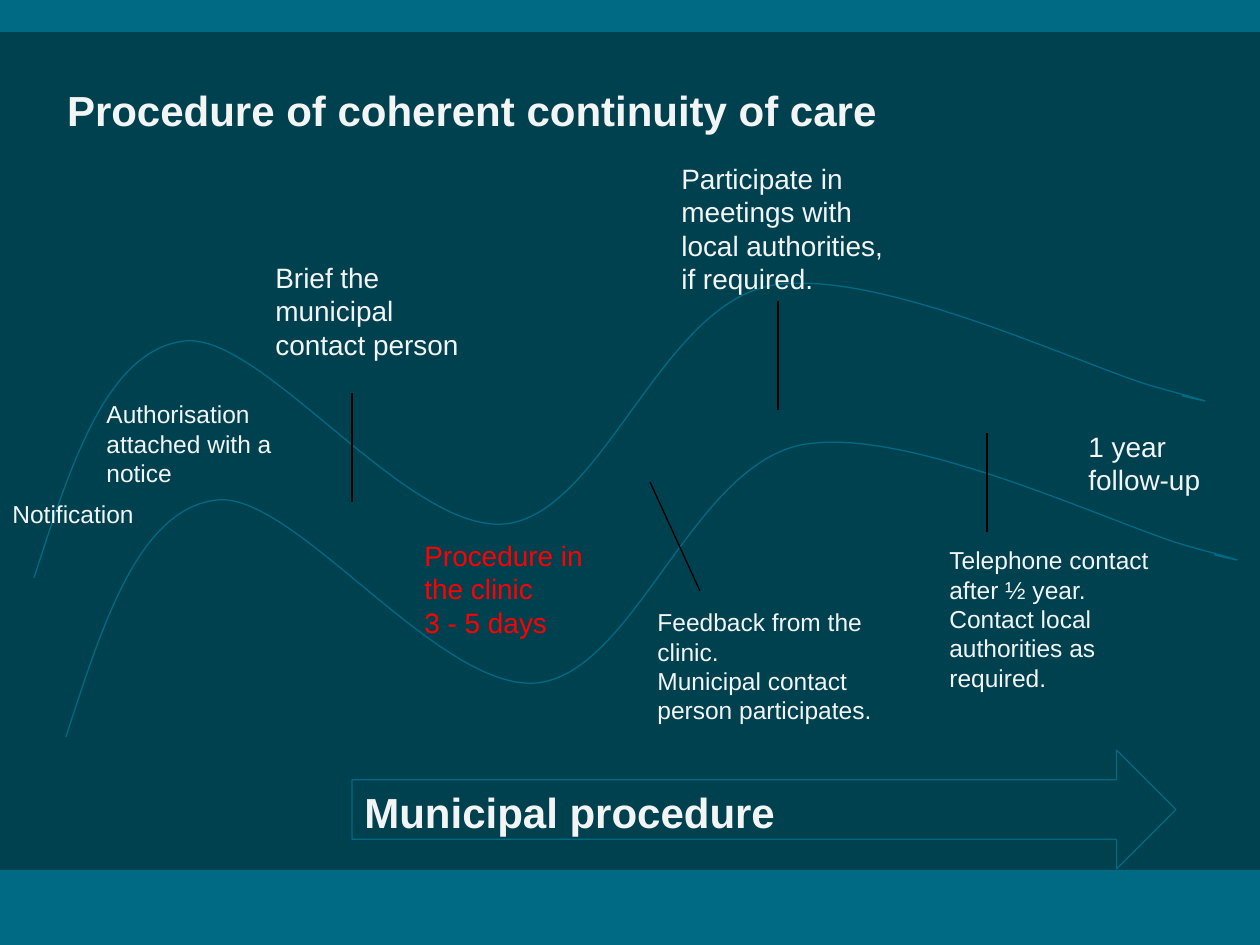
from lxml.etree import SubElement
from pptx import Presentation
from pptx.dml.color import RGBColor
from pptx.enum.shapes import MSO_CONNECTOR, MSO_SHAPE
from pptx.enum.text import MSO_ANCHOR
from pptx.oxml.ns import qn
from pptx.util import Pt

SCALE = 914400 / 126
BACK, TEAL, LIGHT, RED, BLACK = "004150", "006983", "F3F5F5", "FF0000", "000000"

WAVE = [
    (34, 578),
    (71, 464), (107, 350), (185, 341),
    (263, 333), (407, 533), (505, 524),
    (602, 514), (659, 309), (769, 286),
    (877, 265), (1090, 370), (1159, 388),
    (1228, 407), (1205, 401), (1182, 396),
]
WAVE_OFFSETS = [(32, 159), (0, 0)]

LABELS = [
    ((0, 493, 154, 43), "Notification", 14, LIGHT),
    ((94, 393, 208, 102), "Authorisation attached with a notice", 14, LIGHT),
    ((263, 254, 218, 115), "Brief the municipal contact person", 16, LIGHT),
    ((412, 532, 198, 115), "Procedure in the clinic\n3 - 5 days", 16, RED),
    ((669, 155, 238, 149), "Participate in meetings with local authorities, if required.", 16, LIGHT),
    ((937, 539, 238, 161), "Telephone contact after ½ year. Contact local authorities as required.", 14, LIGHT),
    ((1076, 423, 184, 81), "1 year follow-up", 16, LIGHT),
    ((645, 601, 258, 131), "Feedback from the clinic.\nMunicipal contact person participates.", 14, LIGHT),
]
MARKERS = [
    (352, 393, 352, 502),
    (987, 433, 987, 532),
    (650, 482, 700, 591),
    (778, 301, 778, 410),
]


def px(n):
    return round(n * SCALE)


def color(value):
    return RGBColor.from_string(value)


def write(tf, text, size=14, fill=LIGHT, bold=False):
    tf.word_wrap = True
    for i, line in enumerate(text.split("\n")):
        p = tf.paragraphs[0] if i == 0 else tf.add_paragraph()
        r = p.add_run()
        r.text = line
        r.font.name = "Arial"
        r.font.size = Pt(size)
        r.font.bold = bold
        r.font.color.rgb = color(fill)


class Builder:
    def __init__(self, s, font_color=LIGHT, line_width=0.75):
        self.s = s
        self.font_color = font_color
        self.line_width = line_width

    def style(self, sp, fill=None, line=None):
        sp.shadow.inherit = False
        if fill:
            sp.fill.solid()
            sp.fill.fore_color.rgb = color(fill)
        else:
            sp.fill.background()
        if line:
            sp.line.color.rgb = color(line)
            sp.line.width = Pt(self.line_width)
        else:
            sp.line.fill.background()
        for p in sp.text_frame.paragraphs:
            p.font.color.rgb = color(self.font_color)

    def shape(self, kind, box, fill=None, line=None):
        sp = self.s.shapes.add_shape(kind, *map(px, box))
        self.style(sp, fill, line)

    def curve(self, points, line):
        fb = self.s.shapes.build_freeform(*points[0], scale=SCALE)
        fb.add_line_segments(points[1:], close=False)
        sp = fb.convert_to_shape()
        path = next(sp._element.iter(qn("a:path")))
        segments = path.findall(qn("a:lnTo"))
        for i in range(0, len(segments), 3):
            bezier = SubElement(path, qn("a:cubicBezTo"))
            for segment in segments[i:i + 3]:
                bezier.append(segment[0])
                path.remove(segment)
        self.style(sp, line=line)

    def text(self, box, text, **fmt):
        sp = self.s.shapes.add_textbox(*map(px, box))
        write(sp.text_frame, text, **fmt)
        return sp.text_frame

    def title(self, box, text, **fmt):
        tf = self.text(box, text, **fmt)
        tf.vertical_anchor = MSO_ANCHOR.BOTTOM
        tf.margin_left = tf.margin_right = tf.margin_top = tf.margin_bottom = 0

    def line(self, ends, stroke):
        cx = self.s.shapes.add_connector(MSO_CONNECTOR.STRAIGHT, *map(px, ends))
        cx.line.color.rgb = color(stroke)
        cx.line.width = Pt(self.line_width)
        SubElement(cx._element.spPr, qn("a:effectLst"))


def main():
    prs = Presentation()
    prs.slide_width, prs.slide_height = px(1260), px(945)
    b = Builder(prs.slides.add_slide(prs.slide_layouts[6]))

    b.shape(MSO_SHAPE.RECTANGLE, (0, 0, 1260, 945), fill=BACK)
    b.shape(MSO_SHAPE.RECTANGLE, (0, 0, 1260, 32), fill=TEAL)
    b.shape(MSO_SHAPE.RECTANGLE, (0, 870, 1260, 75), fill=TEAL)
    b.title((67, 32, 1126, 103), "Procedure of coherent continuity of care", size=24, bold=True)

    for dx, dy in WAVE_OFFSETS:
        b.curve([(x + dx, y + dy) for x, y in WAVE], TEAL)
    for box, text, size, fill in LABELS:
        b.text(box, text, size=size, fill=fill)
    for ends in MARKERS:
        b.line(ends, BLACK)

    b.shape(MSO_SHAPE.RIGHT_ARROW, (352, 750, 824, 119), line=TEAL)
    b.text((352, 780, 708, 63), "Municipal procedure", size=24, bold=True)
    prs.save("out.pptx")


if __name__ == "__main__":
    main()
